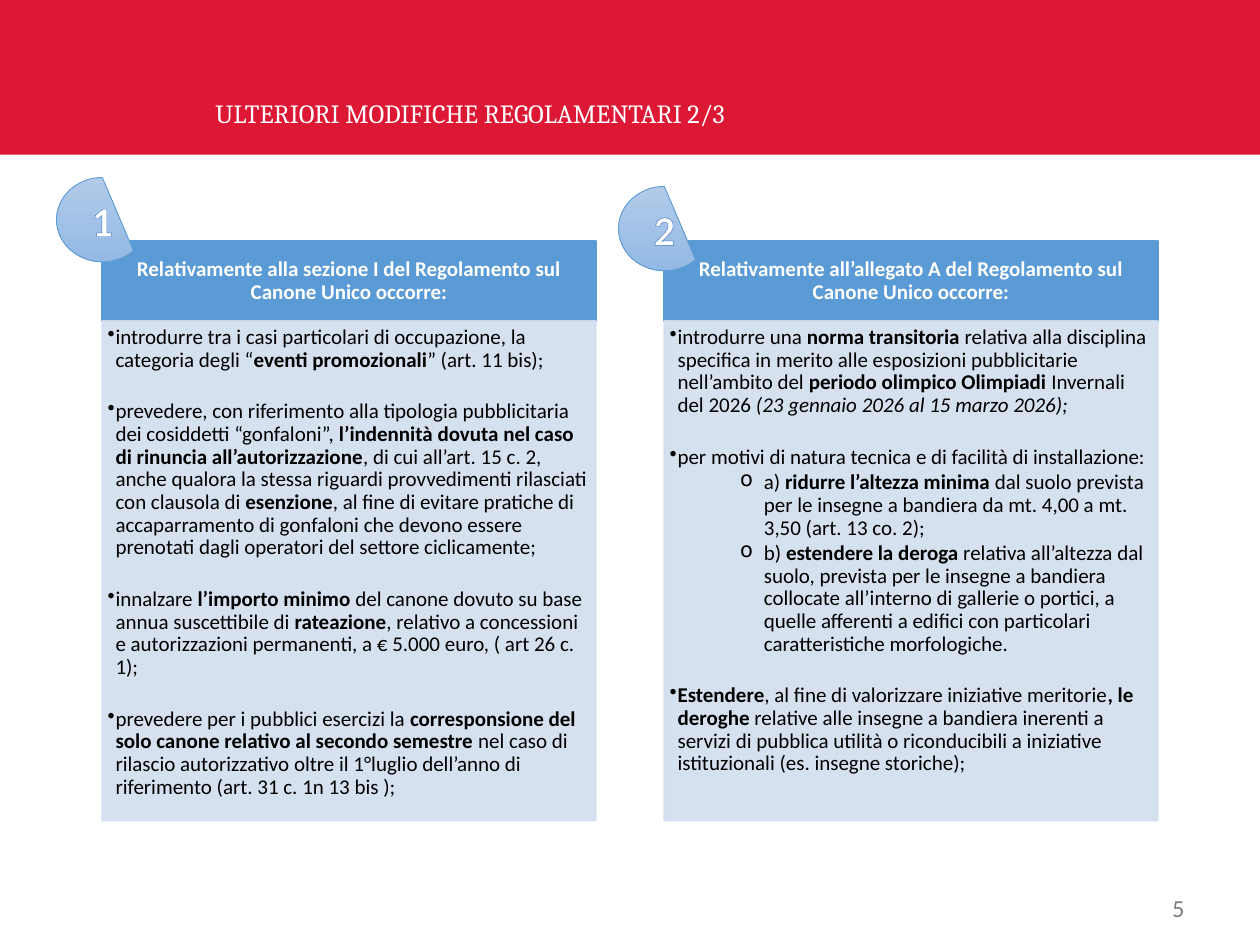
import pptx
import pptx.dml.color
import pptx.enum.shapes
import pptx.enum.text
import pptx.util
from lxml import etree
from pptx.enum.shapes import MSO_SHAPE
from pptx.enum.text import MSO_ANCHOR, PP_ALIGN
from pptx.oxml.ns import qn
from pptx.util import Cm, Pt


def color(value):
    return pptx.dml.color.RGBColor.from_string(value)


class Slide:
    red, blue, pale, white, gray = "DD1835", "5B9BD5", "D2DEEF", "FFFFFF", "808080"
    outline = "4472C4"
    badge_colors = ("B1CBE9", "93B9E4")
    body_font, title_font = "Calibri", "Cambria"
    item_gap = Pt(15)

    def __init__(self, deck):
        self.page = deck.slides.add_slide(deck.slide_layouts[5])

    def shape(self, kind, left, top, width, height, line_width=1):
        box = self.page.shapes.add_shape(kind, Cm(left), Cm(top), Cm(width), Cm(height))
        box.shadow.inherit = False
        box.line.width = Pt(line_width)
        return box

    def paint(self, box, value, opacity=100):
        for fill in (box.fill, box.line.fill):
            fill.solid()
            fill.fore_color.rgb = color(value)
        if opacity < 100:
            for node in box.element.spPr.iter(qn("a:srgbClr")):
                etree.SubElement(node, qn("a:alpha"), val=str(opacity * 1000))

    def insets(self, box, left, top, right, bottom):
        frame = box.text_frame
        frame.word_wrap = True
        frame.margin_left, frame.margin_top = Cm(left), Cm(top)
        frame.margin_right, frame.margin_bottom = Cm(right), Cm(bottom)

    def style(self, para, size, value, align=PP_ALIGN.LEFT, name=body_font, bold=None):
        para.alignment = align
        font = para.font
        font.name, font.size, font.bold = name, Pt(size), bold
        font.color.rgb = color(value)

    def title(self, text):
        title = self.page.shapes.title
        band = self.shape(MSO_SHAPE.RECTANGLE, 0, 0, 25.4, 3.12)
        self.paint(band, self.red)
        band.line.fill.background()
        title.element.addprevious(band.element)
        title.left, title.top = Cm(4.09), Cm(1.52)
        title.width, title.height = Cm(16.79), Cm(1.22)
        title.text_frame.text = text
        title.text_frame.vertical_anchor = MSO_ANCHOR.BOTTOM
        para = title.text_frame.paragraphs[0]
        para.line_spacing = 0.9
        self.style(para, 15, self.white, name=self.title_font)

    def page_number(self, text):
        box = self.page.shapes.add_textbox(Cm(18.21), Cm(17.93), Cm(5.92), Cm(0.74))
        box.text_frame.word_wrap = True
        box.text_frame.vertical_anchor = MSO_ANCHOR.MIDDLE
        para = box.text_frame.paragraphs[0]
        para.text = text
        self.style(para, 14, self.gray, PP_ALIGN.RIGHT)

    def header(self, left, text):
        box = self.shape(MSO_SHAPE.RECTANGLE, left, 4.86, 9.95, 1.61)
        self.paint(box, self.blue)
        self.insets(box, 0.2, 0.1, 0.2, 0.1)
        box.text_frame.vertical_anchor = MSO_ANCHOR.MIDDLE
        para = box.text_frame.paragraphs[0]
        para.text = text
        para.line_spacing = 0.9
        self.style(para, 12, self.white, PP_ALIGN.CENTER, bold=True)

    def bullet(self, para, level):
        mark, margin, hanging = ("•", 0.16, 0.16) if level == 1 else ("o", 1.9, 0.48)
        para.level = level
        properties = para._p.get_or_add_pPr()
        properties.set("marL", str(Cm(margin)))
        properties.set("indent", str(-Cm(hanging)))
        etree.SubElement(properties, qn("a:buChar"), char=mark)

    def spans(self, para, text):
        for bold_index, part in enumerate(text.split("|")):
            for italic_index, piece in enumerate(part.split("~")):
                if piece:
                    span = para.add_run()
                    span.text = piece
                    if bold_index % 2:
                        span.font.bold = True
                    if italic_index % 2:
                        span.font.italic = True

    def items(self, left, entries):
        box = self.shape(MSO_SHAPE.RECTANGLE, left, 6.47, 9.95, 10.07)
        self.paint(box, self.pale, opacity=90)
        self.insets(box, 0.11, 0.11, 0.13, 0.15)
        frame = box.text_frame
        frame.vertical_anchor = MSO_ANCHOR.TOP
        for index, (level, text) in enumerate(entries):
            para = frame.add_paragraph() if index else frame.paragraphs[0]
            self.bullet(para, level)
            para.line_spacing = 0.9
            para.space_before = self.item_gap if index and level == 1 else Pt(0)
            para.space_after = Pt(1.6)
            self.style(para, 12, "000000")
            self.spans(para, text)

    def badge(self, left, top, text):
        box = self.shape(MSO_SHAPE.CHORD, left, top, 1.85, 1.7, 0.5)
        box.line.color.rgb = color(self.blue)
        box.fill.gradient()
        box.fill.gradient_angle = 270
        for stop, value in zip(box.fill.gradient_stops, self.badge_colors):
            stop.color.rgb = color(value)
        box.text_frame.vertical_anchor = MSO_ANCHOR.MIDDLE
        para = box.text_frame.paragraphs[0]
        self.style(para, 24, self.white, PP_ALIGN.CENTER, bold=True)
        span = para.add_run()
        span.text = text
        line = etree.SubElement(span._r.get_or_add_rPr(), qn("a:ln"), w=str(Pt(0.8)))
        fill = etree.SubElement(line, qn("a:solidFill"))
        etree.SubElement(fill, qn("a:srgbClr"), val=self.outline)


COLUMNS = [
    ("Relativamente alla sezione I del Regolamento sul Canone Unico occorre:", [
        (1, "introdurre tra i casi particolari di occupazione, la categoria degli “|eventi "
            "promozionali|” (art. 11 bis);"),
        (1, "prevedere, con riferimento alla tipologia pubblicitaria dei cosiddetti “gonfaloni”, "
            "|l’indennità dovuta nel caso di rinuncia all’autorizzazione|, di cui all’art. 15 c. 2, "
            "anche qualora la stessa riguardi provvedimenti rilasciati con clausola di |esenzione|, "
            "al fine di evitare pratiche di accaparramento di gonfaloni che devono essere prenotati "
            "dagli operatori del settore ciclicamente;"),
        (1, "innalzare |l’importo minimo |del canone dovuto su base annua suscettibile di "
            "|rateazione|, relativo a concessioni e autorizzazioni permanenti, a € 5.000 euro, "
            "( art 26 c. 1);"),
        (1, "prevedere per i pubblici esercizi la |corresponsione del solo canone relativo al "
            "secondo semestre| nel caso di rilascio autorizzativo oltre il 1°luglio dell’anno di "
            "riferimento (art. 31 c. 1n 13 bis );"),
    ]),
    ("Relativamente all’allegato A del Regolamento sul Canone Unico occorre:", [
        (1, "introdurre una |norma transitoria |relativa alla disciplina specifica in merito alle "
            "esposizioni pubblicitarie nell’ambito del |periodo olimpico Olimpiadi |Invernali del "
            "2026 ~(23 gennaio 2026 al 15 marzo 2026);~"),
        (1, "per motivi di natura tecnica e di facilità di installazione:"),
        (3, "a) |ridurre l’altezza minima |dal suolo prevista per le insegne a bandiera da "
            "mt. 4,00 a mt. 3,50 (art. 13 co. 2);"),
        (3, "b) |estendere la deroga| relativa all’altezza dal suolo, prevista per le insegne a "
            "bandiera collocate all’interno di gallerie o portici, a quelle afferenti a edifici con "
            "particolari caratteristiche morfologiche."),
        (1, "|Estendere|, al fine di valorizzare iniziative meritorie|, le deroghe| relative alle "
            "insegne a bandiera inerenti a servizi di pubblica utilità o riconducibili a iniziative "
            "istituzionali (es. insegne storiche);"),
    ]),
]


def main():
    deck = pptx.Presentation()
    deck.slide_width, deck.slide_height = Cm(25.4), Cm(19.05)
    slide = Slide(deck)
    slide.title("ULTERIORI MODIFICHE REGOLAMENTARI 2/3")
    slide.page_number("5")
    first_left, column_step = 2.06, 11.33
    for index, (heading, entries) in enumerate(COLUMNS):
        left = first_left + index * column_step
        slide.header(left, heading)
        slide.items(left, entries)
        slide.badge(left - 0.92, 3.58 + index * 0.18, str(index + 1))
    deck.save("out.pptx")


if __name__ == "__main__":
    main()
